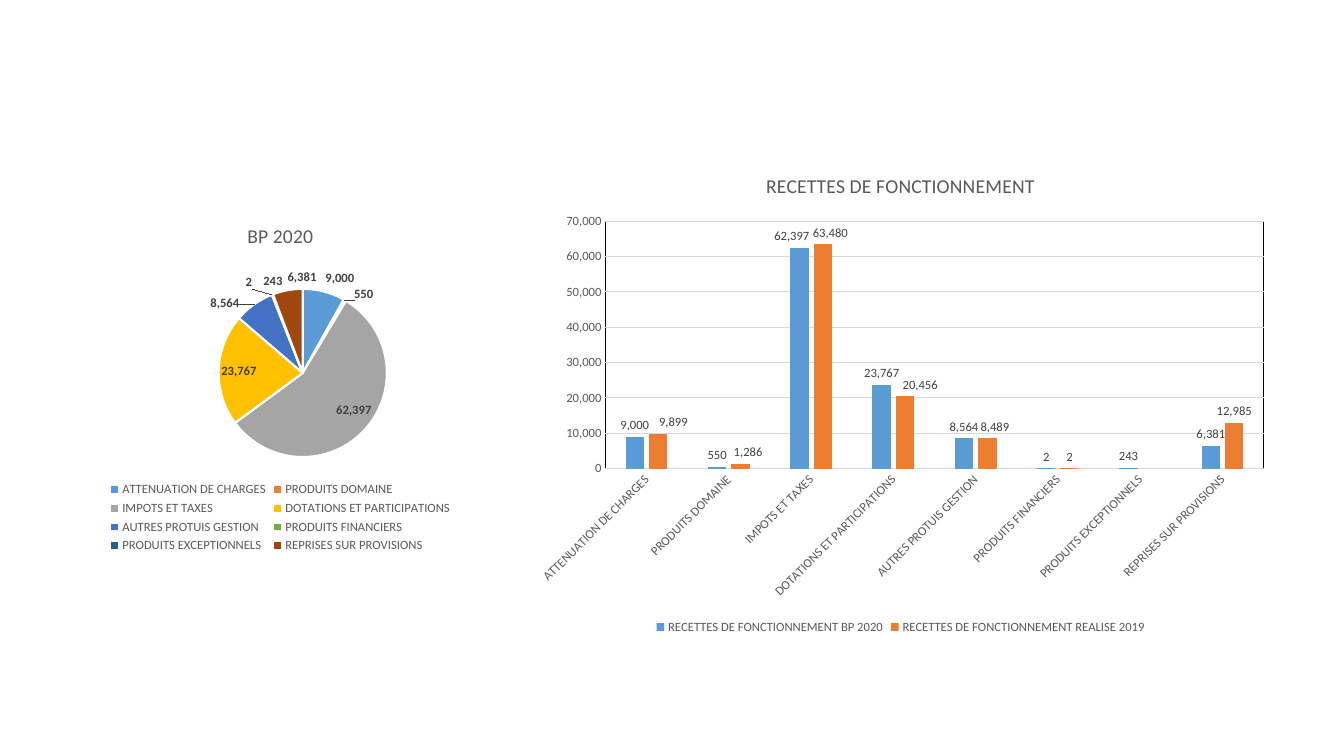
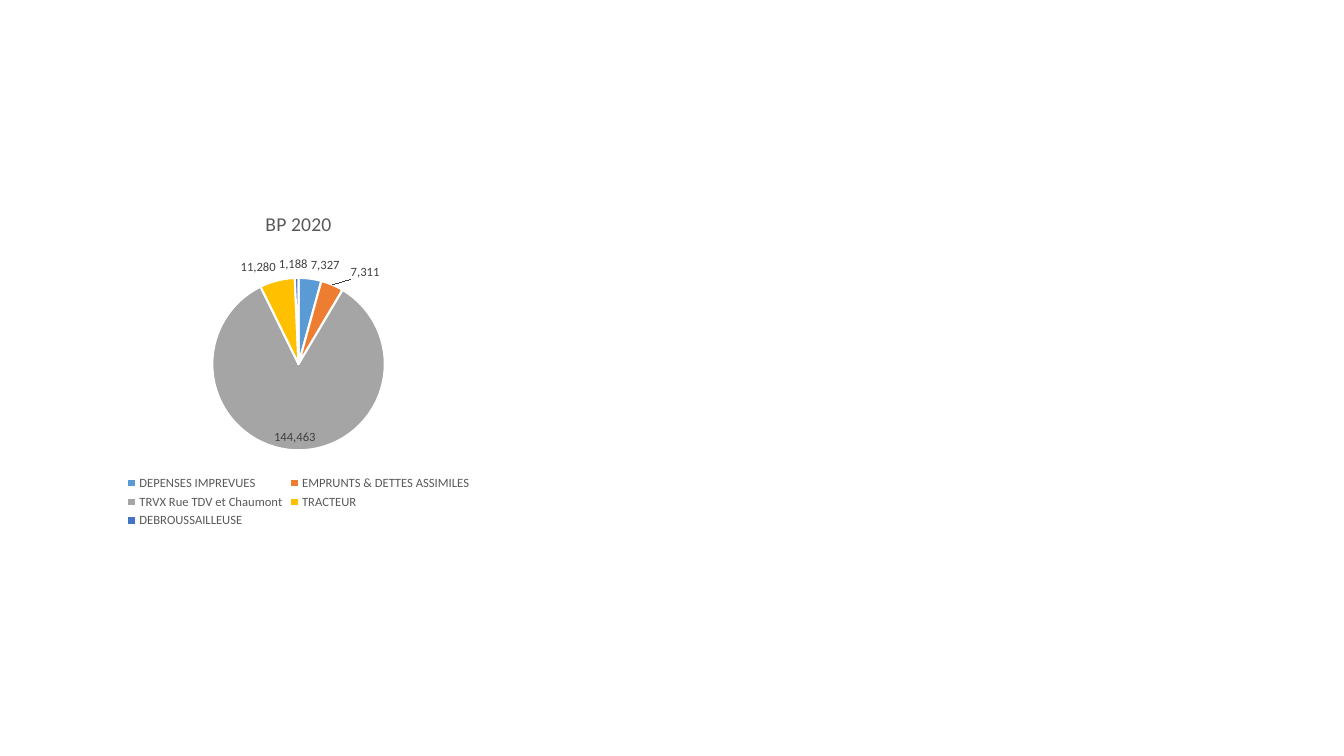
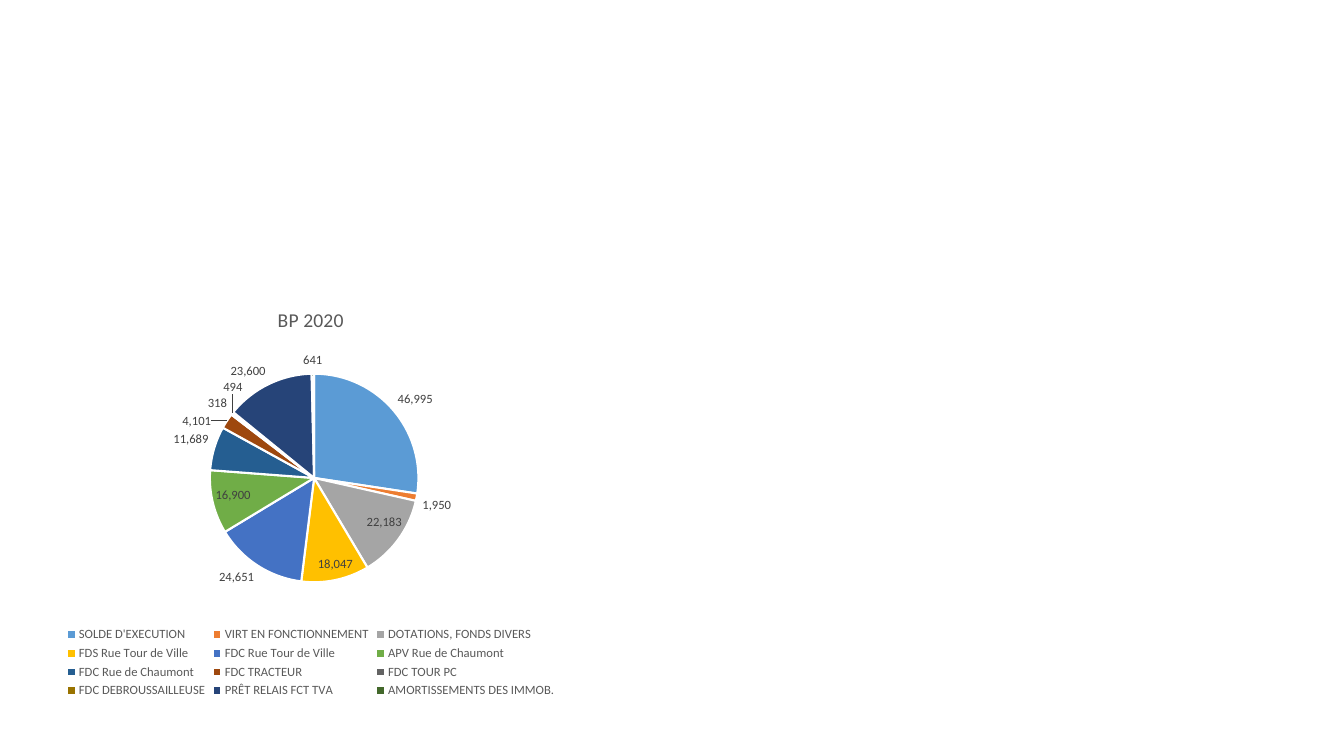
from lxml.etree import Element, SubElement
from pptx import Presentation
from pptx.chart.data import CategoryChartData
from pptx.dml.color import RGBColor
from pptx.enum.chart import (XL_CHART_TYPE, XL_LABEL_POSITION, XL_LEGEND_POSITION,
                             XL_TICK_MARK)
from pptx.oxml.ns import qn
from pptx.util import Pt

FONT = "Calibri"
NUMBER_FORMAT = "#,##0"
COLORS = {"text": "595959", "label": "404040", "grid": "D9D9D9",
          "border": "000000", "white": "FFFFFF"}
SERIES_COLORS = ["5B9BD5", "ED7D31", "A5A5A5", "FFC000", "4472C4", "70AD47",
                 "255E91", "9E480E", "636363", "997300", "264478", "43682B"]

INCOME = ["ATTENUATION DE CHARGES", "PRODUITS DOMAINE", "IMPOTS ET TAXES",
          "DOTATIONS ET PARTICIPATIONS", "AUTRES PROTUIS GESTION",
          "PRODUITS FINANCIERS", "PRODUITS EXCEPTIONNELS", "REPRISES SUR PROVISIONS"]
INCOME_2020 = [9000, 550, 62397, 23767, 8564, 2, 243, 6381]
INCOME_2019 = [9899, 1286, 63480, 20456, 8489, 2, None, 12985]

# Boxes are left, top, width, height in points; plots are fractions of their box.
BARS = {
    "title": "RECETTES DE FONCTIONNEMENT",
    "box": (373, 109.5, 540.5, 346.5), "plot": (0.11, 0.14, 0.87, 0.51),
    "categories": INCOME,
    "series": {"RECETTES DE FONCTIONNEMENT BP 2020": INCOME_2020,
               "RECETTES DE FONCTIONNEMENT REALISE 2019": INCOME_2019},
    "label_shifts": [{2: -0.01}, {0: 0.02, 1: 0.01, 2: 0.01, 3: 0.02, 4: 0.01}],
}
INCOME_PIE = {
    "box": (0, 147.5, 400.5, 250.5), "plot": (0.39, 0.235, 0.3, 0.48),
    "categories": INCOME, "values": INCOME_2020, "bold_labels": True,
}
INVESTMENT_COST_PIE = {
    "box": (14.5, 139, 397.5, 241), "plot": (0.345, 0.245, 0.31, 0.515),
    "categories": ["DEPENSES IMPREVUES", "EMPRUNTS & DETTES ASSIMILES",
                   "TRVX Rue TDV et Chaumont", "TRACTEUR", "DEBROUSSAILLEUSE"],
    "values": [7327, 7311, 144463, 11280, 1188],
}
INVESTMENT_INCOME_PIE = {
    "box": (-21, 206.5, 486, 295), "plot": (0.35, 0.205, 0.31, 0.505),
    "categories": ["SOLDE D'EXECUTION", "VIRT EN FONCTIONNEMENT",
                   "DOTATIONS, FONDS DIVERS", "FDS Rue Tour de Ville",
                   "FDC Rue Tour de Ville", "APV Rue de Chaumont",
                   "FDC Rue de Chaumont", "FDC TRACTEUR", "FDC TOUR PC",
                   "FDC DEBROUSSAILLEUSE", "PRÊT RELAIS FCT TVA",
                   "AMORTISSEMENTS DES IMMOB."],
    "values": [46995, 1950, 22183, 18047, 24651, 16900, 11689, 4101, 318, 494,
               23600, 641],
    "outside_labels": [0, 4, 6, 10],
}


def rgb(color):
    return RGBColor.from_string(COLORS.get(color, color))


def style_font(font, size=9, color="text", bold=False):
    font.name, font.size, font.bold = FONT, Pt(size), bold
    font.color.rgb = rgb(color)


def style_line(line, color, width=0.75):
    line.color.rgb = rgb(color)
    line.width = Pt(width)


def set_title(chart, text, **font_format):
    frame = chart.chart_title.text_frame
    frame.text = text
    style_font(frame.paragraphs[0].runs[0].font, **font_format)


def make_layout(**settings):
    """Return a manual chart layout element holding the given settings."""
    layout = Element(qn("c:layout"))
    manual = SubElement(layout, qn("c:manualLayout"))
    for name, value in settings.items():
        SubElement(manual, qn(f"c:{name}")).set("val", str(value))
    return layout


def place_plot(chart, plot):
    area = chart._chartSpace.chart.plotArea
    for old_layout in area.findall(qn("c:layout")):
        area.remove(old_layout)
    x, y, w, h = plot
    area.insert(0, make_layout(layoutTarget="inner", xMode="edge", yMode="edge",
                               x=x, y=y, w=w, h=h))
    return area


def style_labels(labels, position, bold=False):
    labels.show_value = True
    labels.number_format = NUMBER_FORMAT
    labels.number_format_is_linked = False
    labels.position = position
    style_font(labels.font, color="label", bold=bold)


def add_chart(slide, kind, spec, title, series):
    data = CategoryChartData(number_format=NUMBER_FORMAT)
    data.categories = spec["categories"]
    for name, values in series.items():
        data.add_series(name, values)
    box = [Pt(length) for length in spec["box"]]
    chart = slide.shapes.add_chart(kind, *box, data).chart
    chart.font.name, chart.font.size = FONT, Pt(10)
    set_title(chart, title, size=14)
    chart.has_legend = True
    chart.legend.position = XL_LEGEND_POSITION.BOTTOM
    chart.legend.include_in_layout = False
    style_font(chart.legend.font)
    return chart


def add_pie(slide, spec):
    title = "BP 2020"
    chart = add_chart(slide, XL_CHART_TYPE.PIE, spec, title, {title: spec["values"]})
    place_plot(chart, spec["plot"])
    chart.plots[0].vary_by_categories = True
    pie = chart.plots[0].series[0]
    for index, color in enumerate(SERIES_COLORS[:len(spec["values"])]):
        slice_format = pie.points[index].format
        slice_format.fill.solid()
        slice_format.fill.fore_color.rgb = rgb(color)
        style_line(slice_format.line, "white", 1.5)
    style_labels(pie.data_labels, XL_LABEL_POSITION.BEST_FIT,
                 spec.get("bold_labels", False))
    for index in spec.get("outside_labels", []):
        label = pie.points[index].data_label
        style_font(label.font, color="label")
        label.position = XL_LABEL_POSITION.OUTSIDE_END


def add_bars(slide, spec):
    chart = add_chart(slide, XL_CHART_TYPE.COLUMN_CLUSTERED, spec, spec["title"],
                      spec["series"])
    area = place_plot(chart, spec["plot"])
    border = SubElement(SubElement(area, qn("c:spPr")), qn("a:ln"), w=str(Pt(0.75)))
    fill = SubElement(border, qn("a:solidFill"))
    SubElement(fill, qn("a:srgbClr"), val=COLORS["border"])

    for axis in (chart.category_axis, chart.value_axis):
        axis.major_tick_mark = axis.minor_tick_mark = XL_TICK_MARK.NONE
        style_font(axis.tick_labels.font)
    style_line(chart.category_axis.format.line, "grid")
    text_body = chart.category_axis._element.find(qn("c:txPr"))
    text_body.find(qn("a:bodyPr")).set("rot", str(-45 * 60000))
    values = chart.value_axis
    values.minimum_scale, values.maximum_scale, values.major_unit = 0, 70000, 10000
    values.tick_labels.number_format = NUMBER_FORMAT
    values.tick_labels.number_format_is_linked = False
    values.format.line.fill.background()
    style_line(values.major_gridlines.format.line, "grid")

    plot = chart.plots[0]
    plot.vary_by_categories = False
    plot.gap_width, plot.overlap = 219, -27
    for series, color, shifts in zip(plot.series, SERIES_COLORS, spec["label_shifts"]):
        series.format.fill.solid()
        series.format.fill.fore_color.rgb = rgb(color)
        style_labels(series.data_labels, XL_LABEL_POSITION.OUTSIDE_END)
        for index, shift in shifts.items():
            label = series.points[index].data_label
            style_font(label.font, color="label")
            label.position = XL_LABEL_POSITION.OUTSIDE_END
            label._get_or_add_dLbl().insert(1, make_layout(x=shift, y=0))


SLIDES = [
    [(add_bars, BARS), (add_pie, INCOME_PIE)],
    [(add_pie, INVESTMENT_COST_PIE)],
    [(add_pie, INVESTMENT_INCOME_PIE)],
]


def main():
    deck = Presentation()
    deck.slide_width, deck.slide_height = Pt(960), Pt(540)
    for charts in SLIDES:
        slide = deck.slides.add_slide(deck.slide_layouts[6])
        for add, chart_spec in charts:
            add(slide, chart_spec)
    deck.save("out.pptx")


if __name__ == "__main__":
    main()
